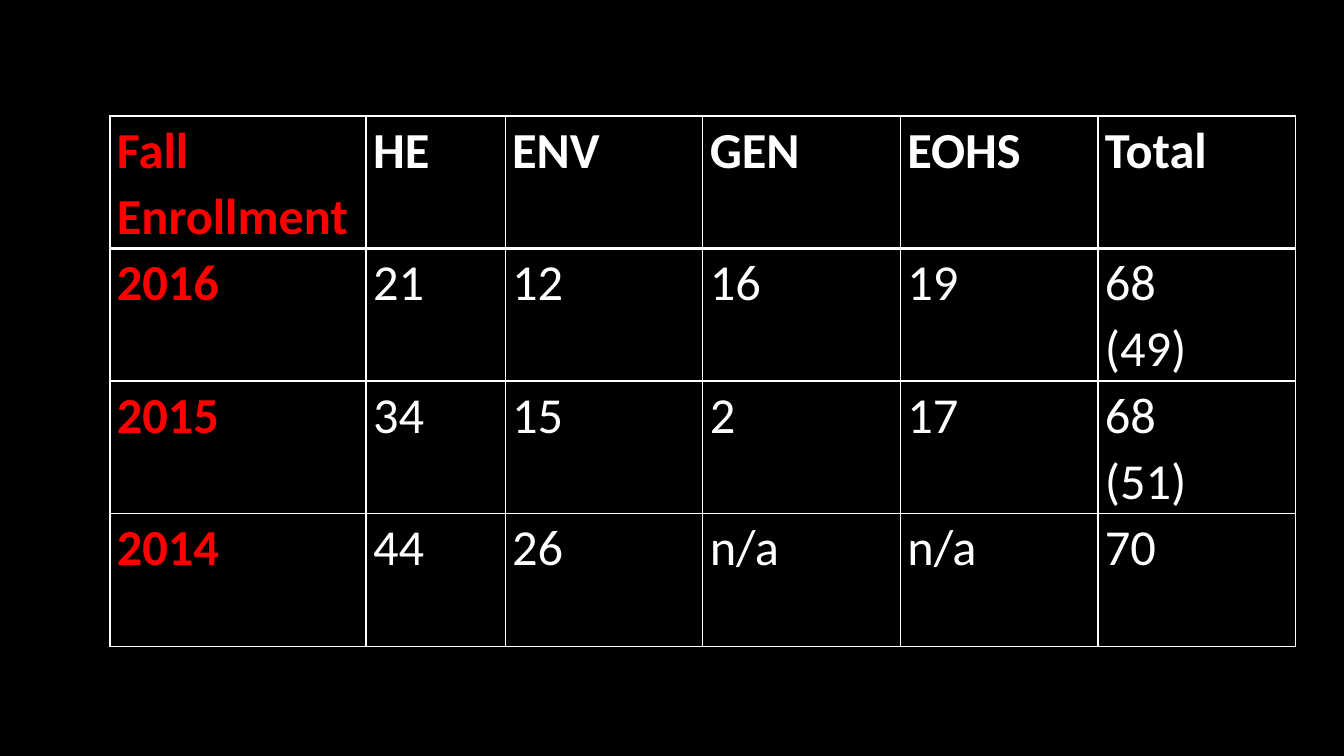
from lxml.etree import SubElement
from pptx import Presentation
from pptx.dml.color import RGBColor
from pptx.oxml.ns import qn
from pptx.util import Inches, Pt

BLACK, WHITE, RED = "000000", "FFFFFF", "FF0000"
COLUMN_WIDTHS = [2.54, 1.38, 1.96, 1.96, 1.96, 1.96]
ROW_HEIGHT = 1.315
ENROLLMENT = [
    ["Fall Enrollment", "HE", "ENV", "GEN", "EOHS", "Total"],
    ["2016", "21", "12", "16", "19", "68\n(49)"],
    ["2015", "34", "15", "2", "17", "68\n(51)"],
    ["2014", "44", "26", "n/a", "n/a", "70"],
]
CELL_MARGINS = {
    "margin_left": Inches(0.07),
    "margin_right": Inches(0.07),
    "margin_top": 0,
    "margin_bottom": 0,
}


def set_fill(fill, color):
    fill.solid()
    fill.fore_color.rgb = RGBColor.from_string(color)


def set_borders(cell, widths):
    """Draw white cell borders; widths maps each side to points, in schema order."""
    properties = cell._tc.get_or_add_tcPr()
    for side, width in widths.items():
        line = SubElement(properties, qn(f"a:ln{side}"), w=str(Pt(width)))
        solid = SubElement(line, qn("a:solidFill"))
        SubElement(solid, qn("a:srgbClr"), val=WHITE)


def write_cell(cell, text, color, bold):
    for name, value in CELL_MARGINS.items():
        setattr(cell, name, value)
    cell.text = text
    font_format = {"name": "Calibri", "size": Pt(36), "bold": bold}
    for para in cell.text_frame.paragraphs:
        para.line_spacing = 1.07
        for span in para.runs:
            for name, value in font_format.items():
                setattr(span.font, name, value)
            span.font.color.rgb = RGBColor.from_string(color)


def add_enrollment_table(page):
    table = page.shapes.add_table(
        len(ENROLLMENT), len(COLUMN_WIDTHS), Inches(1.09), Inches(1.15),
        Inches(sum(COLUMN_WIDTHS)), Inches(ROW_HEIGHT * len(ENROLLMENT)),
    ).table
    for column, width in zip(table.columns, COLUMN_WIDTHS):
        column.width = Inches(width)
    for r, texts in enumerate(ENROLLMENT):
        table.rows[r].height = Inches(ROW_HEIGHT)
        widths = {"L": 1, "R": 1, "T": 3 if r == 1 else 1, "B": 3 if r == 0 else 1}
        for c, text in enumerate(texts):
            cell = table.cell(r, c)
            write_cell(cell, text, RED if c == 0 else WHITE, r == 0 or c == 0)
            set_borders(cell, widths)
            set_fill(cell.fill, BLACK)


def main():
    deck = Presentation()
    deck.slide_width, deck.slide_height = Inches(13.33), Inches(7.5)
    page = deck.slides.add_slide(deck.slide_layouts[6])
    set_fill(page.background.fill, BLACK)
    add_enrollment_table(page)
    deck.save("out.pptx")


if __name__ == "__main__":
    main()
